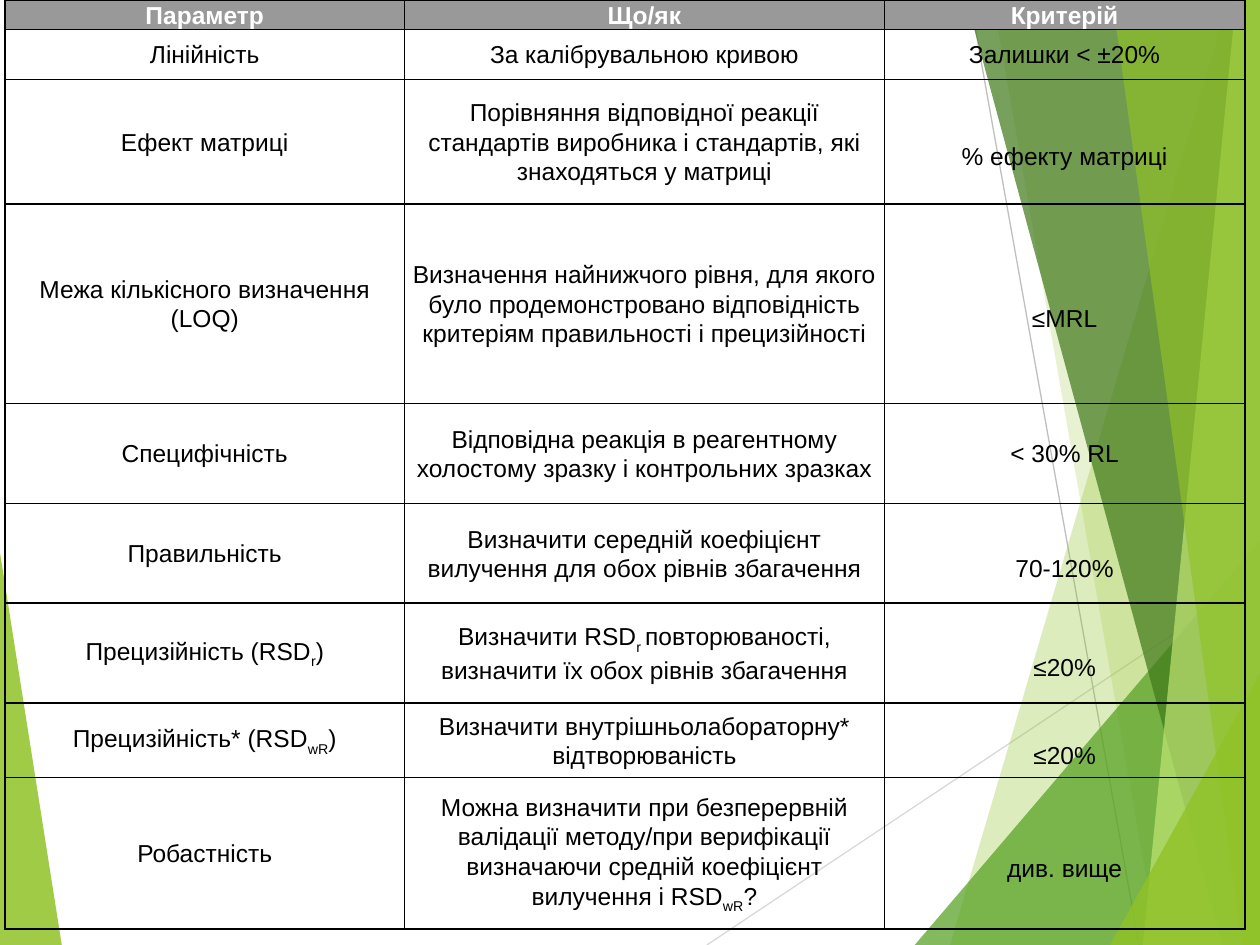
import pptx
import pptx.util
import pptx.dml.color
import pptx.enum.shapes
import pptx.enum.text
import pptx.oxml
import pptx.oxml.ns

qn = pptx.oxml.ns.qn
INK, WHITE, GREY = "000000", "FFFFFF", "999999"
LIME, LEAF, MOSS, PALE = "90C226", "54A021", "3F7819", "C0E474"


def paint(text):
    return pptx.dml.color.RGBColor.from_string(text)


def sub(parent, tag, **attrs):
    node = parent.makeelement(qn(tag), attrs)
    parent.append(node)
    return node


class Deck:
    """Style and current slide; lengths are percent of the slide's size."""
    font, size, lead = "Arial", 14, 1.07
    line = 0.23  # height of one text line, inches

    def __init__(self):
        self.prs = pptx.Presentation()
        self.prs.slide_width = pptx.util.Inches(10)
        self.prs.slide_height = pptx.util.Inches(7.5)
        self.slide = self.prs.slides.add_slide(self.prs.slide_layouts[6])
        self.shapes = self.slide.shapes

    def x(self, share):
        return round(self.prs.slide_width * share / 100)

    def y(self, share):
        return round(self.prs.slide_height * share / 100)

    def facet(self, color, alpha, *points):
        spots = [(self.x(a), self.y(b)) for a, b in points]
        pen = self.shapes.build_freeform(*spots[0])
        pen.add_line_segments(spots[1:], close=True)
        shape = pen.convert_to_shape()
        shape.shadow.inherit = False
        shape.line.fill.background()
        shape.fill.solid()
        shape.fill.fore_color.rgb = paint(color)
        tint = shape._element.spPr.find(qn("a:solidFill"))[0]
        sub(tint, "a:alpha", val=str(alpha * 1000))

    def ray(self, color, start, end):
        line = self.shapes.add_connector(
            pptx.enum.shapes.MSO_CONNECTOR.STRAIGHT,
            self.x(start[0]), self.y(start[1]), self.x(end[0]), self.y(end[1]))
        line.line.color.rgb = paint(color)
        line.line.width = pptx.util.Pt(0.75)
        sub(line._element.spPr, "a:effectLst")

    def text(self, para, words, color, bold):
        """Add runs; parts between underscores are subscripts."""
        para.alignment = pptx.enum.text.PP_ALIGN.CENTER
        para.line_spacing = self.lead
        for i, part in enumerate(words.split("_")):
            run = para.add_run()
            run.text = part
            run.font.name = self.font
            run.font.size = pptx.util.Pt(self.size)
            run.font.bold = bold
            run.font.color.rgb = paint(color)
            if i % 2:
                run._r.get_or_add_rPr().set("baseline", "-25000")

    def cell(self, cell, words, head, drop):
        cell.margin_left = cell.margin_right = pptx.util.Inches(0.04)
        cell.margin_top = pptx.util.Inches(self.line if drop else 0)
        cell.margin_bottom = 0
        anchor = pptx.enum.text.MSO_ANCHOR
        cell.vertical_anchor = anchor.TOP if head else anchor.MIDDLE
        self.text(cell.text_frame.paragraphs[0], words,
                  WHITE if head else INK, head)
        # Borders come before the fill
        props = cell._tc.get_or_add_tcPr()
        for side in "LRTB":
            edge = sub(props, "a:ln" + side, w=str(pptx.util.Pt(1)))
            sub(sub(edge, "a:solidFill"), "a:srgbClr", val=INK)
        if head:
            cell.fill.solid()
            cell.fill.fore_color.rgb = paint(GREY)
        else:
            cell.fill.background()

    def table(self, left, top, cols, rows, data, drops):
        frame = self.shapes.add_table(
            len(rows), len(cols), self.x(left), self.y(top),
            self.x(sum(cols)), self.y(sum(rows)))
        grid = frame.table
        grid.first_row = grid.horz_banding = False
        for col, share in zip(grid.columns, cols):
            col.width = self.x(share)
        for row, share in zip(grid.rows, rows):
            row.height = self.y(share)
        for r, line in enumerate(data):
            for c, words in enumerate(line):
                self.cell(grid.cell(r, c), words, r == 0,
                          c == len(cols) - 1 and r in drops)


DATA = [
    ("Параметр", "Що/як", "Критерій"),
    ("Лінійність", "За калібрувальною кривою", "Залишки < ±20%"),
    ("Ефект матриці",
     "Порівняння відповідної реакції стандартів виробника і стандартів, "
     "які знаходяться у матриці", "% ефекту матриці"),
    ("Межа кількісного визначення (LOQ)",
     "Визначення найнижчого рівня, для якого було продемонстровано "
     "відповідність критеріям правильності і прецизійності", "≤MRL"),
    ("Специфічність",
     "Відповідна реакція в реагентному холостому зразку і контрольних "
     "зразках", "< 30% RL"),
    ("Правильність",
     "Визначити середній коефіцієнт вилучення для обох рівнів збагачення",
     "70-120%"),
    ("Прецизійність (RSD_r_)",
     "Визначити RSD_r _повторюваності, визначити їх обох рівнів збагачення",
     "≤20%"),
    ("Прецизійність* (RSD_wR_)",
     "Визначити внутрішньолабораторну* відтворюваність", "≤20%"),
    ("Робастність",
     "Можна визначити при безперервній валідації методу/при верифікації "
     "визначаючи средній коефіцієнт вилучення і RSD_wR_?", "див. вище"),
]
DROPS = {2, 3, 5, 6, 7, 8}  # criteria set one line lower
UNIT = 2.64  # row step of the table
ROWS = [UNIT * n for n in (1.16, 2, 5, 8, 4, 4, 4, 3, 6.06)]


def main():
    deck = Deck()

    # Left wedge and thin rays
    deck.facet(LIME, 85, (0, 58.5), (4.9, 100), (0, 100))
    deck.ray("D9D9D9", (56.1, 100), (100, 61))
    deck.ray("BFBFBF", (77, 0), (90.4, 100))

    # Facets on the right: colour, opacity, top and bottom of the left edge
    for color, alpha, top, foot in [
            (LIME, 30, (97.5, 0), 75.4),
            (LIME, 20, (78.8, 0), 91.9),
            (LEAF, 72, (100, 57.2), 72.6),
            (MOSS, 70, (76.7, 0), 97),
            (PALE, 70, (98.1, 0), 90.7),
            (LIME, 65, (88.3, 0), 98.6),
            (LIME, 80, (100, 71.3), 88.1)]:
        deck.facet(color, alpha, top, (foot, 100), (100, 100), (100, top[1]))

    # Table of validation parameters
    deck.table(0.4, 0, (31.7, 38.1, 28.6), ROWS, DATA, DROPS)
    deck.prs.save("out.pptx")


if __name__ == "__main__":
    main()
